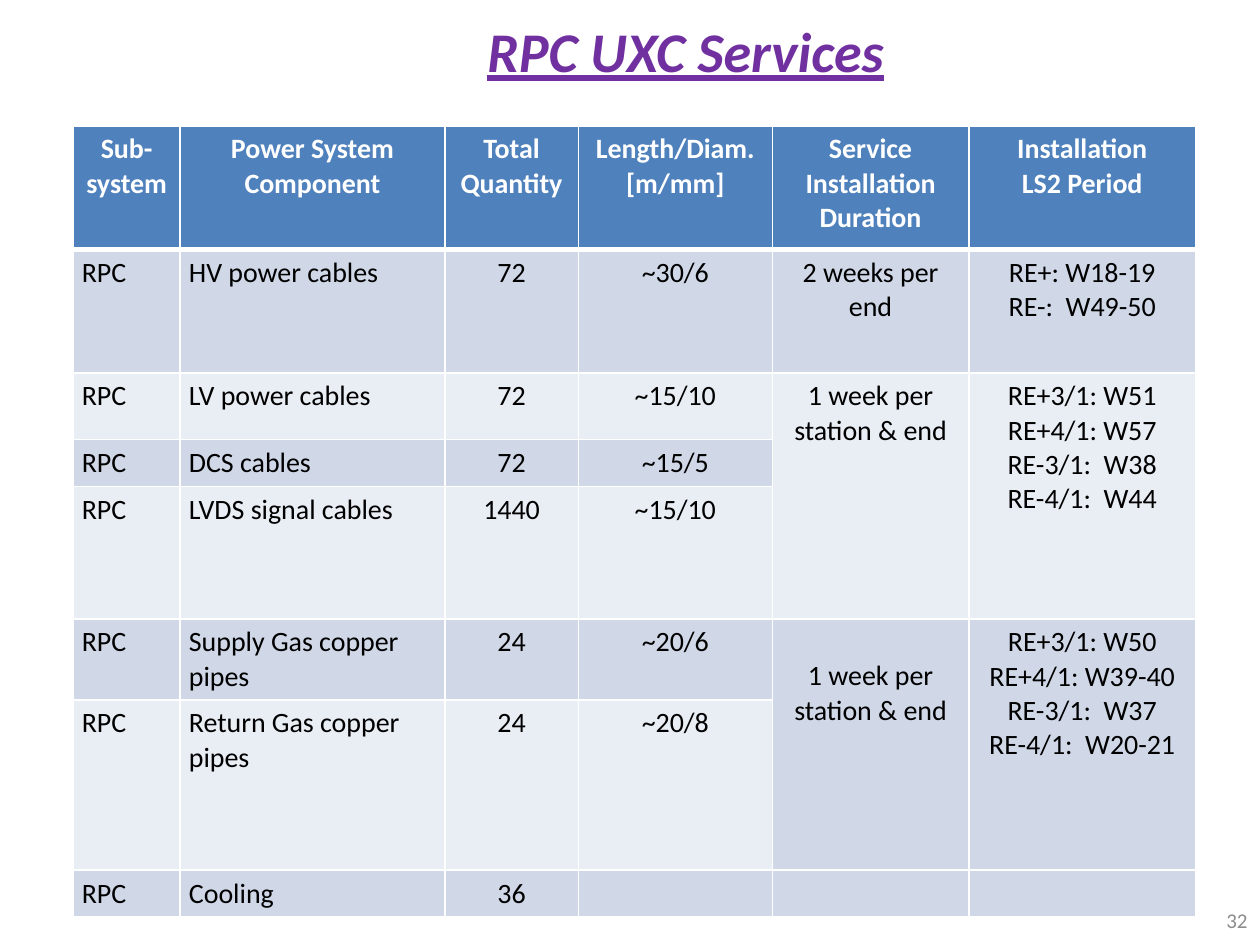
from lxml.etree import SubElement
from pptx import Presentation
from pptx.dml.color import RGBColor
from pptx.enum.text import MSO_ANCHOR, PP_ALIGN
from pptx.oxml.ns import qn
from pptx.util import Inches, Pt

FONT = "Calibri"
WHITE = RGBColor(0xFF, 0xFF, 0xFF)
BLACK = RGBColor(0, 0, 0)
PURPLE = RGBColor(0x70, 0x30, 0xA0)
GRAY = RGBColor(0x8C, 0x8C, 0x8C)
HEADER = RGBColor(0x4F, 0x81, 0xBD)
BANDS = [RGBColor(0xE9, 0xED, 0xF4), RGBColor(0xD0, 0xD8, 0xE8)]

COL_WIDTHS = [0.85, 2.1, 1.06, 1.54, 1.56, 1.8]
ROW_HEIGHTS = [0.98, 0.98, 0.53, 0.3, 1.05, 0.53, 1.35, 0.3]
CELL_SIZE = 16

# \v is a line break, \n a new paragraph
ROWS = [
    ["Sub-system", "Power System Component", "Total\vQuantity",
     "Length/Diam.\v[m/mm]", "Service Installation\vDuration",
     "Installation\vLS2 Period"],
    ["RPC", "HV power cables", "72", "~30/6", "2 weeks per end",
     "RE+: W18-19\vRE-:  W49-50"],
    ["RPC", "LV power cables", "72", "~15/10", "1 week per station & end",
     "RE+3/1: W51\nRE+4/1: W57\nRE-3/1:  W38\nRE-4/1:  W44"],
    ["RPC", "DCS cables", "72", "~15/5", "", ""],
    ["RPC", "LVDS signal cables", "1440", "~15/10", "", ""],
    ["RPC", "Supply Gas copper pipes", "24", "~20/6",
     "1 week per station & end",
     "RE+3/1: W50\nRE+4/1: W39-40\nRE-3/1:  W37\nRE-4/1:  W20-21"],
    ["RPC", "Return Gas copper pipes", "24", "~20/8", "", ""],
    ["RPC", "Cooling", "36", "", "", ""],
]
MERGED_ROWS = [(2, 4), (5, 6)]
MERGED_COLS = (4, 5)


def style_run(r, size, color, bold=False):
    r.font.name = FONT
    r.font.size = Pt(size)
    r.font.bold = bold
    r.font.color.rgb = color


def add_text(s, left, top, width, height, text, size, color):
    tf = s.shapes.add_textbox(Inches(left), Inches(top), Inches(width),
                              Inches(height)).text_frame
    tf.word_wrap = True
    tf.text = text
    style_run(tf.paragraphs[0].runs[0], size, color)
    return tf


def set_borders(cell, top, bottom):
    tc_pr = cell._tc.get_or_add_tcPr()
    for side, width in (("L", 1), ("R", 1), ("T", top), ("B", bottom)):
        ln = SubElement(tc_pr, qn(f"a:ln{side}"), w=str(Pt(width)))
        fill = SubElement(ln, qn("a:solidFill"))
        SubElement(fill, qn("a:srgbClr"), val=str(WHITE))


def fill_cell(cell, text, row, col):
    header = row == 0
    set_borders(cell, 3 if row == 1 else 1, 3 if header else 1)
    cell.fill.solid()
    cell.fill.fore_color.rgb = HEADER if header else BANDS[row % 2]
    cell.margin_left = cell.margin_right = Inches(0.07)
    cell.margin_top = cell.margin_bottom = Inches(0.05)
    cell.text_frame.text = text
    for p in cell.text_frame.paragraphs:
        if header or col > 1:
            p.alignment = PP_ALIGN.CENTER
        for r in p.runs:
            style_run(r, CELL_SIZE, WHITE if header else BLACK, header)
        # Keeps empty cells and line ends from growing the row
        p._p.get_or_add_endParaRPr().set("sz", str(CELL_SIZE * 100))


def add_services_table(s):
    table = s.shapes.add_table(
        len(ROWS), len(COL_WIDTHS), Inches(0.58), Inches(1),
        Inches(sum(COL_WIDTHS)), Inches(sum(ROW_HEIGHTS))).table
    for column, width in zip(table.columns, COL_WIDTHS):
        column.width = Inches(width)
    for row, height in zip(table.rows, ROW_HEIGHTS):
        row.height = Inches(height)
    for i, texts in enumerate(ROWS):
        for j, text in enumerate(texts):
            fill_cell(table.cell(i, j), text, i, j)
    for first, last in MERGED_ROWS:
        for col in MERGED_COLS:
            table.cell(first, col).merge(table.cell(last, col))
    # The gas pipe duration sits one line lower
    table.cell(5, 4).margin_top = Inches(0.32)


def main():
    prs = Presentation()
    prs.slide_width, prs.slide_height = Inches(10), Inches(7.5)
    s = prs.slides.add_slide(prs.slide_layouts[6])

    # Services table
    add_services_table(s)

    # Title
    tf = add_text(s, 3.77, 0.08, 3.9, 0.64, "RPC UXC Services", 32, PURPLE)
    font = tf.paragraphs[0].runs[0].font
    font.bold = font.italic = font.underline = True

    # Slide number
    tf = add_text(s, 7.67, 7.1, 2.33, 0.4, "32", 12, GRAY)
    tf.vertical_anchor = MSO_ANCHOR.MIDDLE
    tf.paragraphs[0].alignment = PP_ALIGN.RIGHT

    prs.save("out.pptx")


if __name__ == "__main__":
    main()
